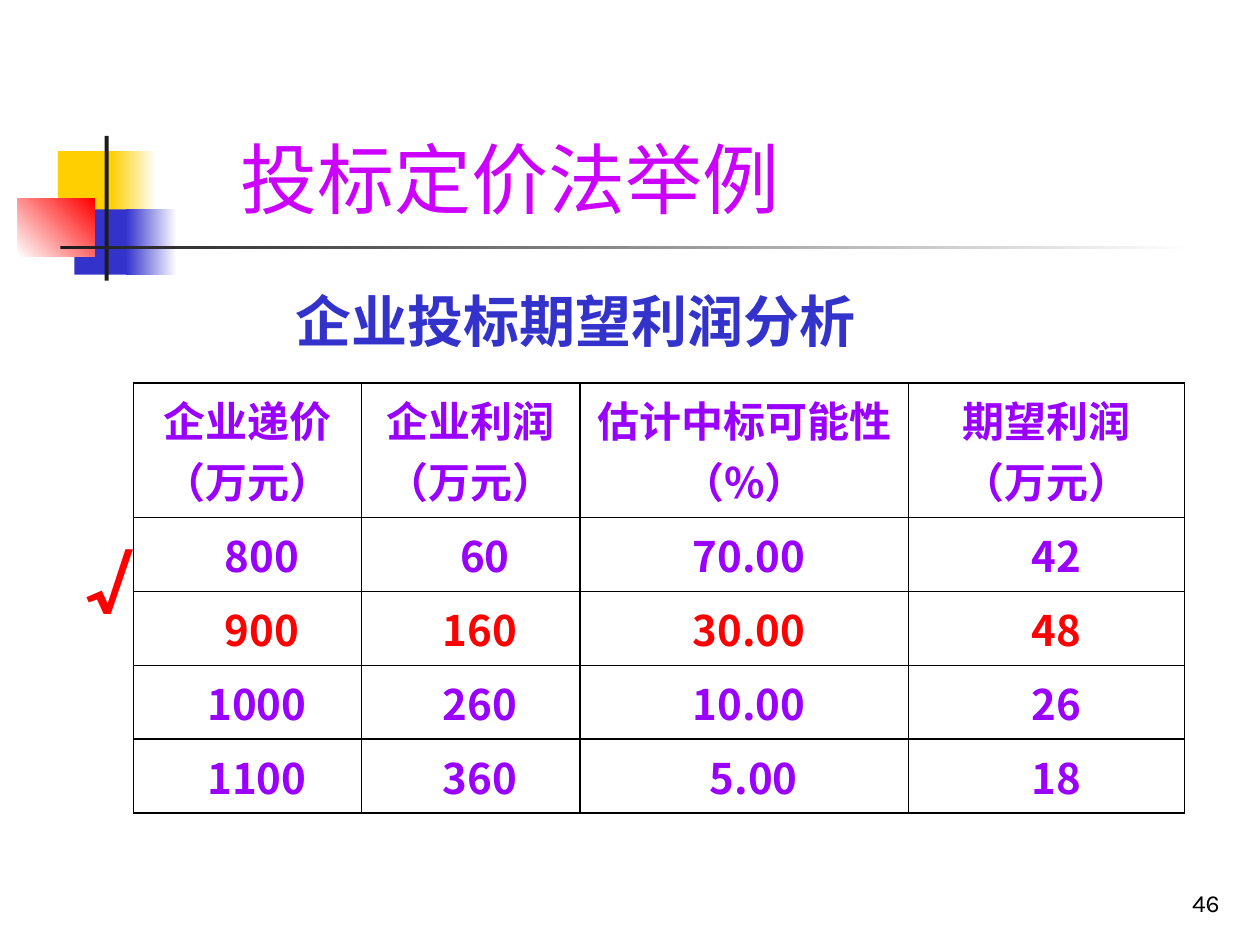
import lxml.etree
import pptx
import pptx.dml.color
import pptx.enum.shapes
import pptx.enum.text
import pptx.oxml.ns
import pptx.util

Cm = pptx.util.Cm
Pt = pptx.util.Pt
qn = pptx.oxml.ns.qn
ALIGN = pptx.enum.text.PP_ALIGN
ANCHOR = pptx.enum.text.MSO_ANCHOR

COLORS = {
    "yellow": "FFCF01", "blue": "3333CC", "red": "FF0000", "dark": "1C1C1C",
    "white": "FFFFFF", "black": "000000", "magenta": "CC00FF", "purple": "9900FF",
}
CJK = "Noto Sans CJK SC"
LATIN = "Karla"


def color_of(name):
    return pptx.dml.color.RGBColor.from_string(COLORS[name])


def write(para, text, color, align, formats):
    para.alignment = align
    span = para.add_run()
    span.text = text
    for key, value in formats.items():
        setattr(span.font, key, value)
    span.font.color.rgb = color_of(color)
    east_asian = lxml.etree.SubElement(span.font._element, qn("a:ea"))
    east_asian.set("typeface", formats["name"])


deck = pptx.Presentation()
deck.slide_width, deck.slide_height = Cm(25.4), Cm(19.05)
page = deck.slides.add_slide(deck.slide_layouts[6])

# Corner ornament and title rule: left, top, width, height, colours, angle
ornament = [
    (1.17, 3.05, 1.22, 1.32, ["yellow"], 0),
    (2.24, 3.05, 0.91, 1.32, ["yellow", "white"], 0),
    (1.5, 4.22, 1.17, 1.32, ["blue"], 0),
    (2.54, 4.22, 1.02, 1.32, ["blue", "white"], 0),
    (0.36, 4.01, 1.55, 1.17, ["white", "red"], 45),
    (2.11, 2.74, 0.08, 2.92, ["dark"], 0),
    (1.22, 4.95, 22.86, 0.08, ["dark", "white"], 0),
]
for left, top, width, height, colors, angle in ornament:
    block = page.shapes.add_shape(
        pptx.enum.shapes.MSO_SHAPE.RECTANGLE, Cm(left), Cm(top), Cm(width), Cm(height))
    block.shadow.inherit = False
    block.line.fill.background()
    if len(colors) == 1:
        block.fill.solid()
        block.fill.fore_color.rgb = color_of(colors[0])
    else:
        block.fill.gradient()
        block.fill.gradient_angle = angle
        for stop, color, position in zip(block.fill.gradient_stops, colors, (0, 1)):
            stop.color.rgb = color_of(color)
            stop.position = position

# Profit table: each figure has its own shift to the right, in space widths
headers = [("企业递价", "（万元）"), ("企业利润", "（万元）"),
           ("估计中标可能性", "（%）"), ("期望利润", "（万元）")]
figures = [
    [("800", 3), ("60", 3), ("70.00", 1), ("42", 2)],
    [("900", 3), ("160", 2), ("30.00", 1), ("48", 2)],
    [("1000", 2), ("260", 2), ("10.00", 1), ("26", 2)],
    [("1100", 2), ("360", 2), ("5.00", 2), ("18", 2)],
]
chosen_price = "900"
rows = [[(lines, 0) for lines in headers]]
rows += [[((text,), shift) for text, shift in row] for row in figures]
column_widths = [4.6, 4.4, 6.63, 5.56]
row_heights = [2.7] + [1.49] * 4
margin, space_width = 0.25, 0.19
table_format = {"name": CJK, "size": Pt(24), "bold": True}

table = page.shapes.add_table(
    len(rows), len(headers), Cm(2.69), Cm(7.72),
    Cm(sum(column_widths)), Cm(sum(row_heights))).table
table.first_row = False
table.horz_banding = False
for column, width in zip(table.columns, column_widths):
    column.width = Cm(width)
for row, height in zip(table.rows, row_heights):
    row.height = Cm(height)

for r, row in enumerate(rows):
    color = "red" if row[0][0] == (chosen_price,) else "purple"
    for c, (lines, shift) in enumerate(row):
        cell = table.cell(r, c)
        cell.fill.background()
        cell.margin_left = Cm(margin + shift * space_width)
        cell.margin_right = Cm(margin)
        frame = cell.text_frame
        for n, line in enumerate(lines):
            para = frame.add_paragraph() if n else frame.paragraphs[0]
            write(para, line, color, ALIGN.CENTER, table_format)
        properties = cell._tc.get_or_add_tcPr()
        for n, side in enumerate(("a:lnL", "a:lnR", "a:lnT", "a:lnB")):
            border = lxml.etree.Element(qn(side), w=str(Pt(1)))
            fill = lxml.etree.SubElement(border, qn("a:solidFill"))
            lxml.etree.SubElement(fill, qn("a:srgbClr"), val=COLORS["black"])
            properties.insert(n, border)

# Title, subtitle, tick beside the chosen price, page number
texts = [
    ("投标定价法举例", 4.6, 0.58, 20.2, 4.06, "magenta", ALIGN.LEFT, ANCHOR.BOTTOM,
     {"name": CJK, "size": Pt(44)}),
    ("企业投标期望利润分析", 5.7, 5.65, 18.6, 1.73, "blue", ALIGN.LEFT, ANCHOR.TOP,
     {"name": LATIN, "size": Pt(32), "bold": True}),
    ("√", 1.5, 10.72, 2.06, 2.11, "red", ALIGN.LEFT, ANCHOR.TOP,
     {"name": LATIN, "size": Pt(44), "bold": True}),
    ("46", 19.56, 17.35, 5.28, 1.27, "black", ALIGN.RIGHT, ANCHOR.BOTTOM,
     {"name": LATIN, "size": Pt(14)}),
]
for text, left, top, width, height, color, align, anchor, formats in texts:
    box = page.shapes.add_textbox(Cm(left), Cm(top), Cm(width), Cm(height))
    box.text_frame.word_wrap = True
    box.text_frame.vertical_anchor = anchor
    write(box.text_frame.paragraphs[0], text, color, align, formats)

deck.save("out.pptx")
